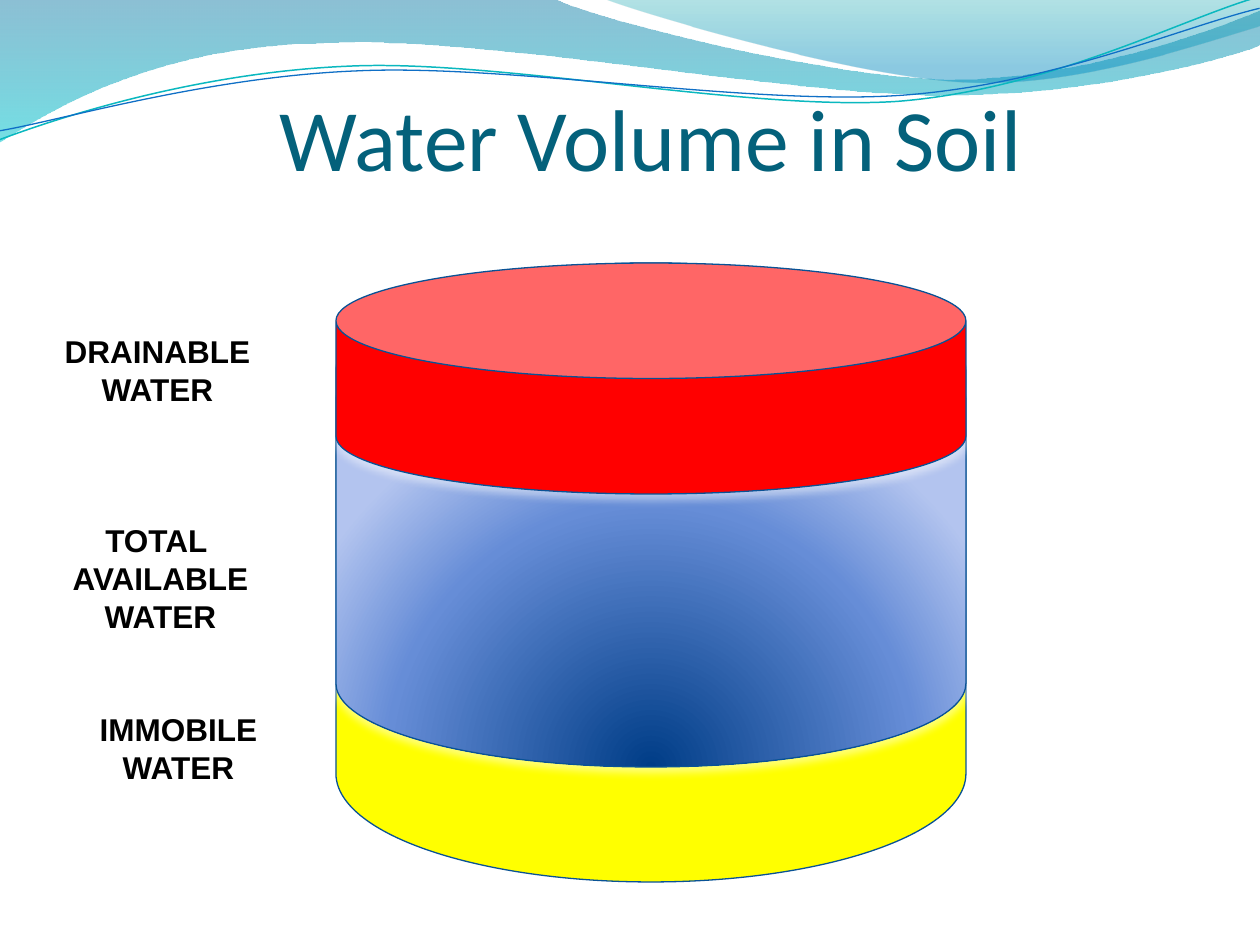
import pptx
import pptx.dml.color
import pptx.enum.shapes
import pptx.enum.text
import pptx.oxml
import pptx.oxml.ns
import pptx.util

PX = 914400 // 126
NAMESPACE = pptx.oxml.ns.nsdecls("a")
ANCHOR = pptx.enum.text.MSO_ANCHOR
AUTO_SIZE = pptx.enum.text.MSO_AUTO_SIZE
CENTER = pptx.enum.text.PP_ALIGN.CENTER

LABEL_FORMAT = {"name": "Arial", "size": pptx.util.Pt(18), "bold": True}
TITLE_FORMAT = {"name": "Calibri", "size": pptx.util.Pt(50), "bold": False}

DOWNWARD = '<a:lin ang="5400000" scaled="0"/>'
FROM_BELOW = ('<a:path path="circle">'
              '<a:fillToRect l="50000" t="130000" r="50000" b="-30000"/></a:path>')

# A curve is a start point, then (control, control, end) triples.
# A part with one point only is a straight line.
BROAD_WAVE = [
    (0, 0), [(554, -1)],
    [(600, 21), (837, 79), (955, 79)], [(1075, 79), (1207, 33), (1260, 11)],
    [(1261, 45)],
    [(1239, 55), (1096, 96), (940, 95)], [(784, 95), (481, 35), (324, 43)],
    [(163, 45), (58, 105), (-1, 142)], [(0, 0)],
]
RIGHT_WAVE = [
    (604, -1), [(641, 14), (859, 78), (969, 82)],
    [(1079, 87), (1211, 40), (1260, 26)], [(1260, 0)], [(604, -1)],
]
TEAL_LINE = [
    (-3, 110), [(59, 90), (199, 52), (350, 53)],
    [(499, 53), (745, 117), (896, 114)], [(1049, 109), (1184, 45), (1260, 27)],
]
BLUE_LINE = [
    (-2, 101), [(57, 94), (207, 57), (357, 58)],
    [(509, 58), (750, 112), (902, 108)], [(1052, 104), (1187, 52), (1262, 38)],
]
LINE_TILT = 357.3
WATER_STOPS = [(0, "003D87", 100), (68, "668DD7", 100), (100, "B3C4EF", 100)]


def color(value):
    return pptx.dml.color.RGBColor.from_string(value)


class SoilPage:
    """Holds the drawing style and the current slide."""
    outline = "095295"
    text_color = "000000"
    shadow_color = "FFFFFF"

    def __init__(self, page):
        self.page = page

    def paint(self, shape, fill, shading=None):
        """Fill with a hex colour, a list of (percent, hex, opacity) stops, or nothing."""
        if isinstance(fill, str):
            shape.fill.solid()
            shape.fill.fore_color.rgb = color(fill)
            return
        shape.fill.background()
        if fill:
            stops = "".join(
                f'<a:gs pos="{place * 1000}"><a:srgbClr val="{value}">'
                f'<a:alpha val="{opacity * 1000}"/></a:srgbClr></a:gs>'
                for place, value, opacity in fill)
            gradient = pptx.oxml.parse_xml(
                f'<a:gradFill {NAMESPACE} rotWithShape="1"><a:gsLst>{stops}</a:gsLst>'
                f'{shading}</a:gradFill>')
            properties = shape.element.spPr
            properties.replace(properties.find(pptx.oxml.ns.qn("a:noFill")), gradient)

    def stroke(self, shape, value, width):
        shape.line.color.rgb = color(value)
        shape.line.width = pptx.util.Pt(width)

    def freeform(self, curve, closed):
        """Join the end points by lines, then bend each line that has control points."""
        start, *parts = curve
        builder = self.page.shapes.build_freeform(*start, scale=PX)
        builder.add_line_segments([part[-1] for part in parts], close=closed)
        shape = builder.convert_to_shape()
        shape.shadow.inherit = False
        ends = [start] + [part[-1] for part in parts]
        left, top = (min(axis) for axis in zip(*ends))
        segments = list(shape.element.spPr.iter(pptx.oxml.ns.qn("a:lnTo")))
        for segment, part in zip(segments, parts):
            if len(part) == 3:
                scale = 1 if self.local_units(shape, ends) else PX
                points = "".join(
                    f'<a:pt x="{(x - left) * scale}" y="{(y - top) * scale}"/>'
                    for x, y in part)
                segment.getparent().replace(segment, pptx.oxml.parse_xml(
                    f'<a:cubicBezTo {NAMESPACE}>{points}</a:cubicBezTo>'))
        return shape

    def local_units(self, shape, ends):
        """Tell whether the outline counts in px rather than in EMU."""
        outline = next(shape.element.spPr.iter(pptx.oxml.ns.qn("a:pathLst")))[0]
        columns = [x for x, _ in ends]
        return int(outline.get("w")) == max(columns) - min(columns)

    def wave(self, curve, stops):
        shape = self.freeform(curve, True)
        self.paint(shape, stops, DOWNWARD)
        shape.line.fill.background()

    def curved_line(self, curve, value, width):
        shape = self.freeform(curve, False)
        shape.rotation = LINE_TILT
        self.paint(shape, None)
        self.stroke(shape, value, width)

    def layer(self, top, height, curvature, fill):
        """Draw one soil layer as a can with a soft light edge below it."""
        shape = self.page.shapes.add_shape(
            pptx.enum.shapes.MSO_SHAPE.CAN, 336 * PX, top * PX, 630 * PX, height * PX)
        shape.adjustments[0] = curvature
        self.paint(shape, fill, FROM_BELOW)
        self.stroke(shape, self.outline, 0.75)
        shape.shadow.inherit = False
        effects = shape.element.spPr.find(pptx.oxml.ns.qn("a:effectLst"))
        effects.append(pptx.oxml.parse_xml(
            f'<a:outerShdw {NAMESPACE} blurRad="57150" dist="38100" dir="5400000" '
            f'rotWithShape="0"><a:srgbClr val="{self.shadow_color}">'
            '<a:alpha val="48000"/></a:srgbClr></a:outerShdw>'))

    def text(self, lines, left, top, width, height, style, value=text_color, **layout):
        box = self.page.shapes.add_textbox(left * PX, top * PX, width * PX, height * PX)
        frame = box.text_frame
        for name, setting in {"word_wrap": True, **layout}.items():
            setattr(frame, name, setting)
        for index, line in enumerate(lines):
            para = frame.add_paragraph() if index else frame.paragraphs[0]
            para.alignment = CENTER
            span = para.add_run()
            span.text = line
            for name, setting in style.items():
                setattr(span.font, name, setting)
            span.font.color.rgb = color(value)


def main():
    deck = pptx.Presentation()
    deck.slide_width = pptx.util.Inches(10)
    deck.slide_height = pptx.util.Inches(7.5)
    soil = SoilPage(deck.slides.add_slide(deck.slide_layouts[6]))

    soil.wave(BROAD_WAVE, [(0, "0074A1", 45), (100, "00C6CF", 55)])
    soil.wave(RIGHT_WAVE, [(0, "00A1A9", 30), (80, "008BBF", 45)])
    soil.curved_line(TEAL_LINE, "0AB8BF", 0.85)
    soil.curved_line(BLUE_LINE, "0F6FC6", 0.75)

    soil.text(["Water Volume in Soil"], 84, 31, 1134, 158, TITLE_FORMAT, "04617B",
              vertical_anchor=ANCHOR.BOTTOM, margin_left=0, margin_right=0,
              margin_bottom=0)

    soil.layer(263, 619, 0.35, "FFFF00")
    soil.layer(315, 452, 0.37, WATER_STOPS)
    soil.layer(263, 231, 0.5, "FF0000")

    for lines, left, top, height in (
            (["DRAINABLE WATER"], 0, 326, 89),
            (["TOTAL ", "AVAILABLE WATER"], 3, 515, 127),
            (["IMMOBILE", "WATER"], 21, 704, 89)):
        soil.text(lines, left, top, 315, height, LABEL_FORMAT,
                  auto_size=AUTO_SIZE.SHAPE_TO_FIT_TEXT,
                  margin_left=20 * PX, margin_right=20 * PX)

    deck.save("out.pptx")


if __name__ == "__main__":
    main()
